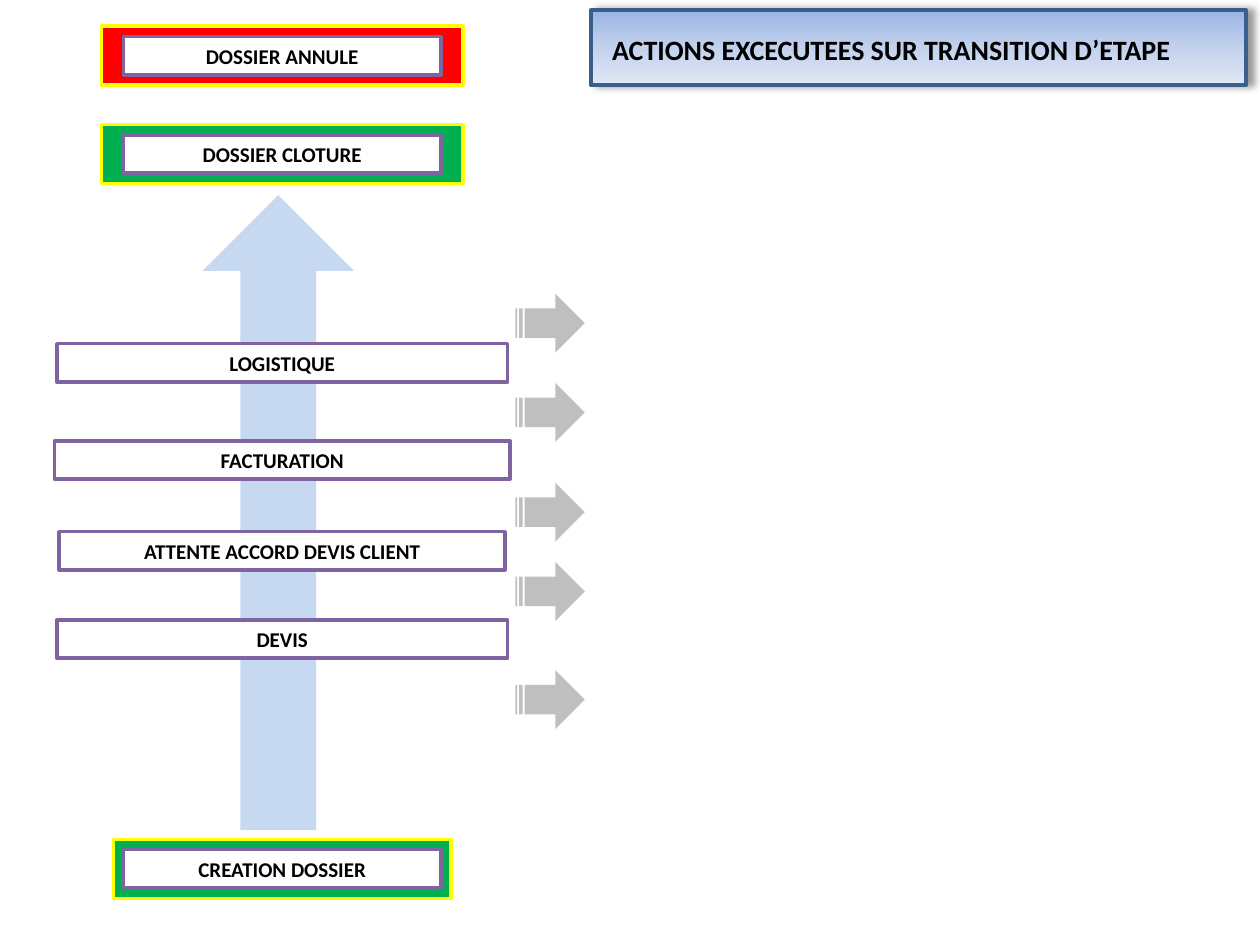
from copy import deepcopy

from lxml.etree import SubElement
from pptx import Presentation
from pptx.dml.color import RGBColor
from pptx.enum.shapes import MSO_SHAPE
from pptx.enum.text import MSO_AUTO_SIZE, PP_ALIGN
from pptx.oxml.ns import qn
from pptx.util import Cm, Pt

COLORS = {
    "black": "000000",
    "white": "FFFFFF",
    "purple": "8064A2",
    "yellow": "FFFF00",
    "red": "FF0000",
    "green": "00B050",
    "flow": "C6D9F1",
    "transition": "BFBFBF",
    "banner_line": "3A5F8C",
    "banner_top": "9AB5E4",
    "banner_middle": "C2D1ED",
    "banner_bottom": "E1E8F5",
}
AXIS = 5.69  # horizontal centre of the step boxes, in cm
STEP_HEIGHT = 0.77
FRAME_HEIGHT = 1.19


def rgb(name):
    return RGBColor.from_string(COLORS[name])


def add_block(slide, kind, left, top, width, height, fill=None, line=None):
    block = slide.shapes.add_shape(kind, Cm(left), Cm(top), Cm(width), Cm(height))
    block.shadow.inherit = False
    if fill:
        block.fill.solid()
        block.fill.fore_color.rgb = rgb(fill)
    if line:
        block.line.color.rgb = rgb(line)
        block.line.width = Pt(2)
    else:
        block.line.fill.background()
    return block


def write(frame, text, size, align):
    frame.word_wrap = True
    frame.auto_size = MSO_AUTO_SIZE.SHAPE_TO_FIT_TEXT
    paragraph = frame.paragraphs[0]
    paragraph.alignment = align
    run = paragraph.add_run()
    run.text = text
    run.font.name = "Calibri"
    run.font.size = Pt(size)
    run.font.bold = True
    run.font.color.rgb = rgb("black")


def add_step(slide, label, top, width):
    step = add_block(slide, MSO_SHAPE.RECTANGLE, AXIS - width / 2, top,
                     width, STEP_HEIGHT, "white", "purple")
    write(step.text_frame, label, 12, PP_ALIGN.CENTER)


def add_framed_step(slide, label, top, width, fill):
    add_block(slide, MSO_SHAPE.RECTANGLE, AXIS - width / 2, top,
              width, FRAME_HEIGHT, fill, "yellow")
    add_step(slide, label, top + (FRAME_HEIGHT - STEP_HEIGHT) / 2, 6.4)


def add_banner(slide, title):
    banner = add_block(slide, MSO_SHAPE.RECTANGLE, 11.91, 0.2, 13.21, 1.52,
                       line="banner_line")

    # Vertical gradient with a middle stop
    banner.fill.gradient()
    banner.fill.gradient_angle = 270
    stop_list = banner.fill._fill._gradFill.find(qn("a:gsLst"))
    stop_list.insert(1, deepcopy(stop_list[0]))
    shades = ("banner_top", "banner_middle", "banner_bottom")
    for index, (stop, shade) in enumerate(zip(banner.fill.gradient_stops, shades)):
        stop.position = index / 2
        stop.color.rgb = rgb(shade)

    # Soft shadow on the right
    effects = banner._element.spPr.find(qn("a:effectLst"))
    shadow = SubElement(effects, qn("a:outerShdw"), blurRad=str(Pt(4)),
                        dist=str(Pt(3)), dir="0", algn="l", rotWithShape="0")
    tint = SubElement(shadow, qn("a:srgbClr"), val=COLORS["black"])
    SubElement(tint, qn("a:alpha"), val="40000")

    heading = slide.shapes.add_textbox(Cm(12.09), Cm(0.53), Cm(12.4), Cm(0.94))
    write(heading.text_frame, title, 16, PP_ALIGN.LEFT)


def add_flow_arrow(slide):
    flow = add_block(slide, MSO_SHAPE.RIGHT_ARROW, -0.79, 8.81, 12.8, 3.05, "flow")
    flow.rotation = 270


def main():
    deck = Presentation()
    deck.slide_width, deck.slide_height = Cm(25.4), Cm(19.05)
    slide = deck.slides.add_slide(deck.slide_layouts[6])

    add_banner(slide, "ACTIONS EXCECUTEES SUR TRANSITION D’ETAPE")
    add_flow_arrow(slide)

    # Start and end states
    for label, top, width, fill in (
        ("DOSSIER ANNULE", 0.53, 7.29, "red"),
        ("DOSSIER CLOTURE", 2.51, 7.29, "green"),
        ("CREATION DOSSIER", 16.92, 6.81, "green"),
    ):
        add_framed_step(slide, label, top, width, fill)

    # Intermediate steps
    for label, top, width in (
        ("LOGISTIQUE", 6.93, 9.09),
        ("FACTURATION", 8.89, 9.19),
        ("ATTENTE ACCORD DEVIS CLIENT", 10.72, 8.99),
        ("DEVIS", 12.5, 9.09),
    ):
        add_step(slide, label, top, width)

    # Transitions between steps
    for top in (5.92, 7.72, 9.73, 11.33, 13.51):
        add_block(slide, MSO_SHAPE.STRIPED_RIGHT_ARROW, 10.39, top,
                  1.4, FRAME_HEIGHT, "transition")

    deck.save("out.pptx")


if __name__ == "__main__":
    main()
